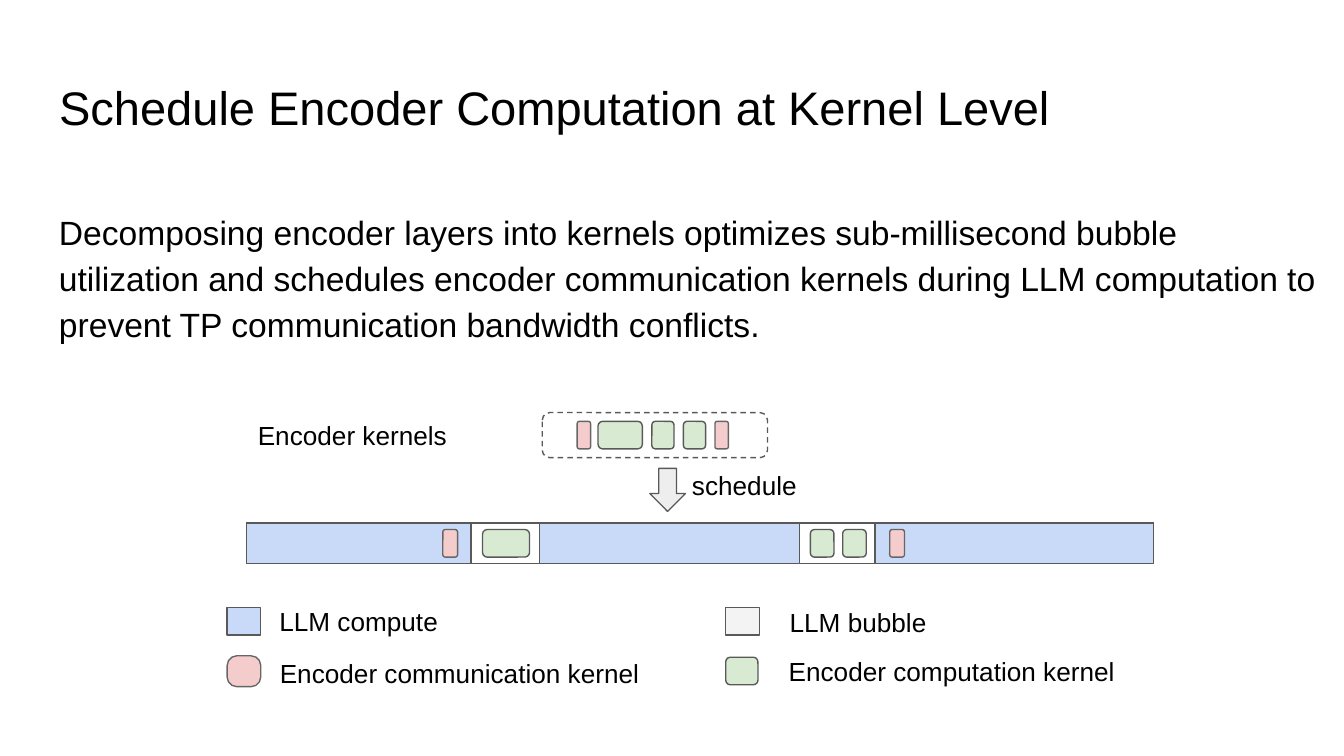
from pptx import Presentation
from pptx.dml.color import RGBColor
from pptx.enum.dml import MSO_LINE
from pptx.enum.shapes import MSO_SHAPE
from pptx.enum.text import MSO_ANCHOR, PP_ALIGN
from pptx.util import Inches, Pt

RECT = MSO_SHAPE.RECTANGLE
ROUND = MSO_SHAPE.ROUNDED_RECTANGLE
ARROW = MSO_SHAPE.DOWN_ARROW
DASH = MSO_LINE.DASH
TOP, MIDDLE = MSO_ANCHOR.TOP, MSO_ANCHOR.MIDDLE
LEFT, CENTER = PP_ALIGN.LEFT, PP_ALIGN.CENTER

COLORS = {
    "text": "000000",
    "line": "595959",
    "comm_line": "666666",
    "compute": "C9DAF8",
    "bubble": "F3F3F3",
    "track": "FFFFFF",
    "arrow": "EEEEEE",
    "comm": "F4CCCC",
    "comp": "D9EAD3",
}
COLS, ROWS = 100, 56.25


class Deck:
    font = "Arial"
    line_width = Pt(0.75)

    def __init__(self):
        self.prs = Presentation()
        self.prs.slide_width = Inches(10)
        self.prs.slide_height = self.prs.slide_width * 9 // 16
        self.slide = self.prs.slides.add_slide(self.prs.slide_layouts[6])

    def color(self, name):
        return RGBColor.from_string(COLORS[name])

    def box(self, col, row, cols, rows):
        x, y = self.prs.slide_width / COLS, self.prs.slide_height / ROWS
        return [round(v) for v in (col * x, row * y, cols * x, rows * y)]

    def text(self, text, col, row, cols, rows, size=14, anchor=MIDDLE,
             align=LEFT, spacing=None, after=None):
        tf = self.slide.shapes.add_textbox(*self.box(col, row, cols, rows)).text_frame
        tf.word_wrap = True
        tf.vertical_anchor = anchor
        tf.margin_left = tf.margin_right = Inches(0.1)
        tf.margin_top = tf.margin_bottom = Inches(0.1)
        tf.text = text
        p = tf.paragraphs[0]
        p.alignment = align
        p.line_spacing = spacing
        p.space_after = after
        font = p.runs[0].font
        font.name = self.font
        font.size = Pt(size)
        font.color.rgb = self.color("text")

    def shape(self, kind, col, row, cols, rows, fill=None, line="line", dash=None):
        sp = self.slide.shapes.add_shape(kind, *self.box(col, row, cols, rows))
        sp.shadow.inherit = False
        if fill:
            sp.fill.solid()
            sp.fill.fore_color.rgb = self.color(fill)
        else:
            sp.fill.background()
        sp.line.color.rgb = self.color(line)
        sp.line.width = self.line_width
        if dash:
            sp.line.dash_style = dash
        return sp

    def kernel(self, kind, col, row, cols, rows=2.05, corner=0.167):
        line = "comm_line" if kind == "comm" else "line"
        sp = self.shape(ROUND, col, row, cols, rows, kind, line)
        sp.adjustments[0] = corner

    def kernels(self, row, items):
        for kind, col, cols in items:
            self.kernel(kind, col, row, cols)


def main():
    deck = Deck()
    deck.text("Schedule Encoder Computation at Kernel Level",
              3.41, 4.87, 93.2, 6.3, size=25.2, anchor=TOP)
    deck.text("Decomposing encoder layers into kernels optimizes sub-millisecond "
              "bubble utilization and schedules encoder communication kernels during "
              "LLM computation to prevent TP communication bandwidth conflicts.",
              3.41, 14.3, 96, 13.1, size=18, anchor=TOP, spacing=1.15, after=Pt(12))

    deck.text("Encoder kernels", 18.2, 30.3, 21.3, 4.1)
    deck.shape(ROUND, 40.35, 30.7, 16.75, 3.35, dash=DASH)
    deck.kernels(31.35, [("comm", 42.95, 1), ("comp", 44.5, 3.3), ("comp", 48.5, 1.65),
                         ("comp", 50.85, 1.65), ("comm", 53.2, 1)])

    deck.shape(ARROW, 48.35, 34.85, 2.65, 3.2, "arrow")
    deck.text("schedule", 50.5, 34.45, 14.1, 3.3)

    deck.shape(RECT, 18.35, 38.9, 67.5, 3.05, "track")
    for col, cols in [(18.35, 16.7), (40.15, 19.35), (65.1, 20.75)]:
        deck.shape(RECT, col, 38.9, cols, 3.05, "compute")
    deck.kernels(39.4, [("comm", 32.95, 1.1), ("comp", 35.9, 3.5), ("comp", 60.3, 1.75),
                        ("comp", 62.7, 1.75), ("comm", 66.2, 1.1)])

    for col, fill in [(16.9, "compute"), (54, "bubble")]:
        deck.shape(RECT, col, 45.2, 2.5, 2.05, fill)
    deck.kernel("comm", 16.9, 48.8, 2.5, 2.3, corner=0.315)
    deck.kernel("comp", 54, 48.9, 2.4)
    deck.text("LLM compute", 17.54, 44.6, 18.3, 3.3, align=CENTER)
    deck.text("LLM bubble", 55.35, 44.2, 17, 4.1, align=CENTER)
    deck.text("Encoder communication kernel", 19.84, 46.64, 37.4, 6.9)
    deck.text("Encoder computation kernel", 57.7, 45.5, 32.6, 8.9)

    deck.prs.save("out.pptx")


if __name__ == "__main__":
    main()
